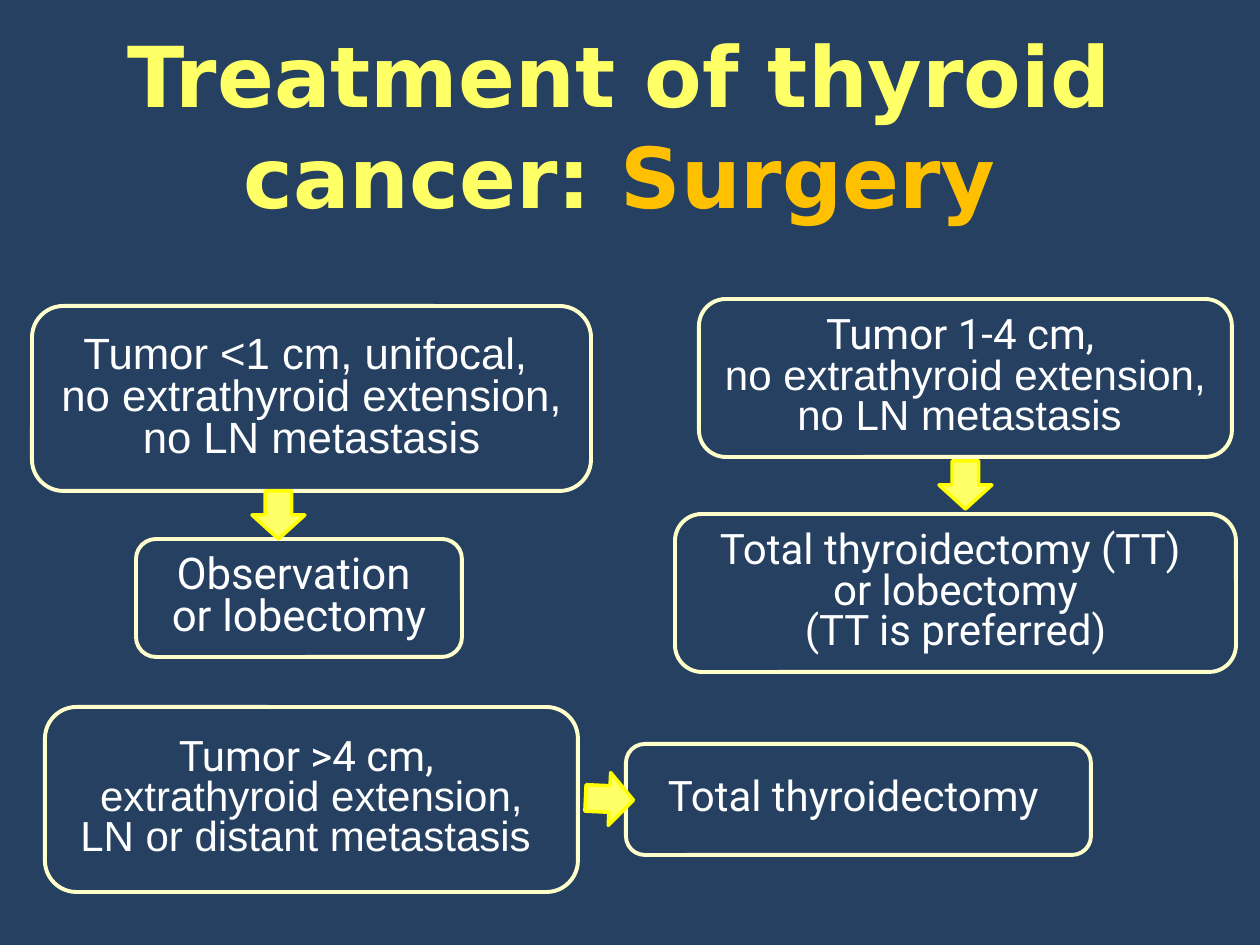
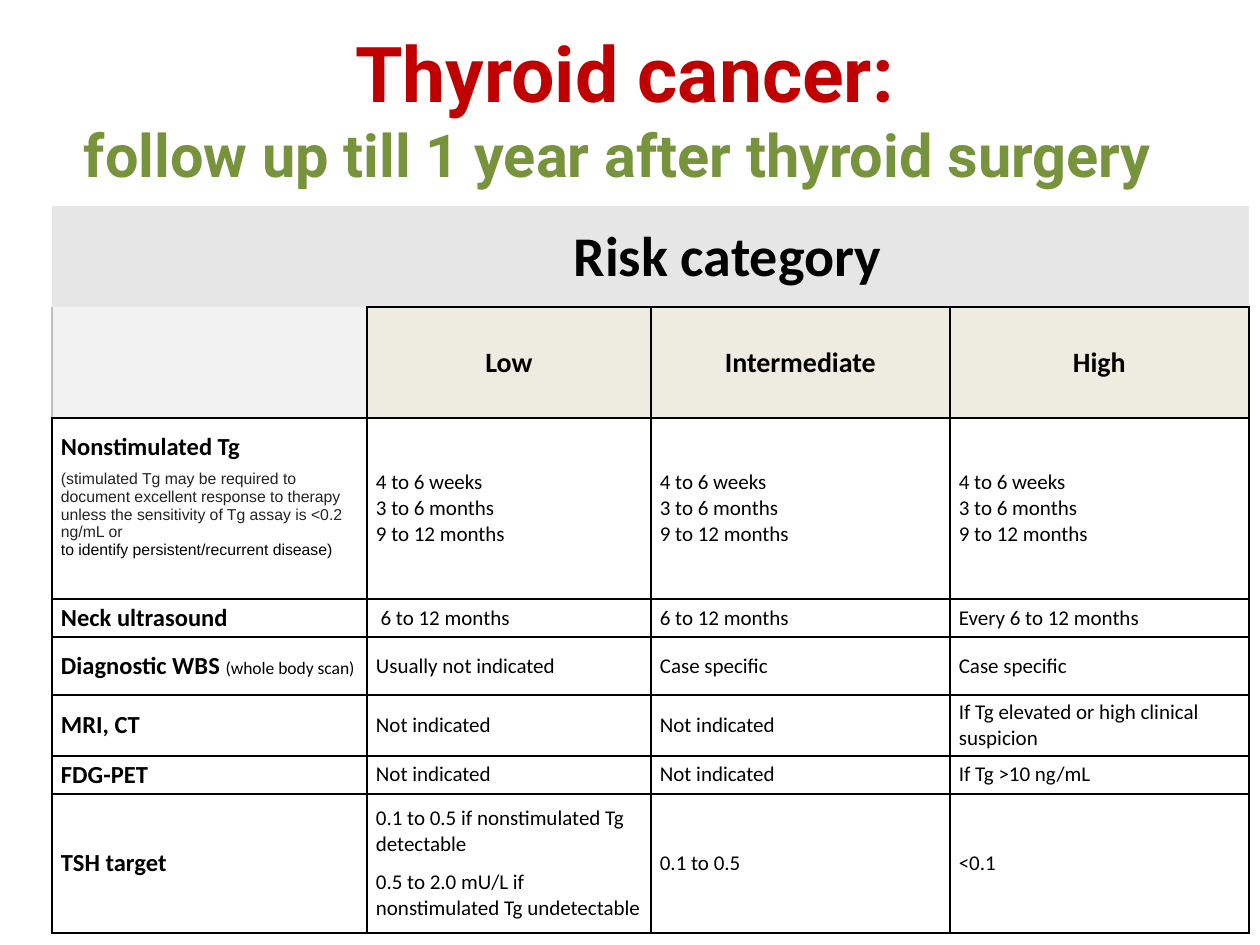
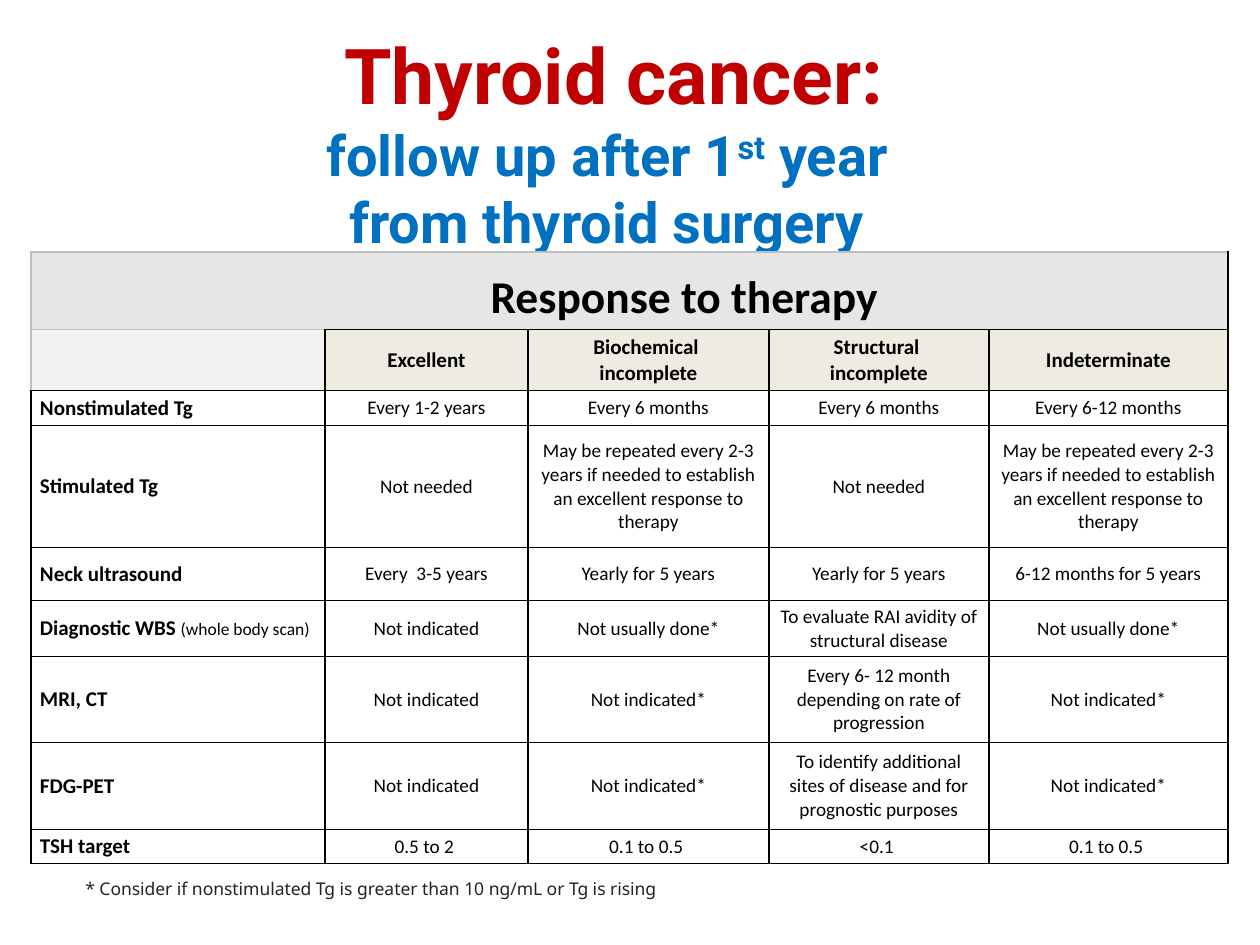
from lxml import etree
from pptx import Presentation
from pptx.dml.color import RGBColor
from pptx.enum.shapes import MSO_SHAPE
from pptx.enum.text import MSO_ANCHOR, MSO_AUTO_SIZE, PP_ALIGN
from pptx.oxml.ns import qn
from pptx.util import Pt

PX = 914400 // 126
TITLE_ONLY = 5
LEFT, CENTER = PP_ALIGN.LEFT, PP_ALIGN.CENTER
MIDDLE = MSO_ANCHOR.MIDDLE
NO_AUTOFIT = MSO_AUTO_SIZE.NONE
ROUND_BOX, DOWN_ARROW = MSO_SHAPE.ROUNDED_RECTANGLE, MSO_SHAPE.DOWN_ARROW
PLAIN_TABLE = "{2D5ABB26-0587-4C30-8999-92F81FD0307C}"

NAVY, WHITE, BLACK, INK = "254061", "FFFFFF", "000000", "232323"
LEMON, YELLOW, CREAM, AMBER = "FFFF66", "FFFF00", "FFFFCC", "FFC000"
RED, GREEN, BLUE = "C00000", "77933C", "0070C0"
BAND, CORNER, HEAD, GREY = "E6E6E6", "F2F2F2", "EEECE1", "BFBFBF"
BLACK_LINE, GREY_LINE = (BLACK, 1), (GREY, 0.75)


def paint(fill, color):
    fill.solid()
    fill.fore_color.rgb = RGBColor.from_string(color)


def add_run(paragraph, text, size, font, color, bold=False):
    run = paragraph.add_run()
    run.text = text
    run.font.size = Pt(size)
    run.font.name = font
    run.font.bold = bold
    paint(run.font.fill, color)
    return run


prs = Presentation()
prs.slide_width, prs.slide_height = 1260 * PX, 945 * PX

# Backgrounds and titles: background, title box, bottom inset, lines of runs
headline = [("Thyroid cancer:", 44, "Roboto", RED)]
title_specs = [
    (NAVY, (84, 45, 1071, 158), 6, [
        [("Treatment of thyroid cancer: ", 48, "DejaVu Sans", LEMON),
         ("Surgery", 48, "DejaVu Sans", AMBER)]]),
    (WHITE, (-10, 63, 1270, 158), 76, [
        headline,
        [("follow up till 1 year after thyroid surgery ", 34, "Roboto", GREEN)]]),
    (WHITE, (-21, 95, 1270, 158), 72, [
        headline,
        [("follow up after 1", 32, "Roboto", BLUE), ("st", 32, "Roboto", BLUE),
         (" year ", 32, "Roboto", BLUE)],
        [("from thyroid surgery ", 32, "Roboto", BLUE)]]),
]
slides = []
for background, box, bottom_inset, lines in title_specs:
    slide = prs.slides.add_slide(prs.slide_layouts[TITLE_ONLY])
    slides.append(slide)
    paint(slide.background.fill, background)
    title = slide.shapes.title
    title.left, title.top, title.width, title.height = [n * PX for n in box]
    frame = title.text_frame
    frame.auto_size = NO_AUTOFIT
    frame.vertical_anchor = MIDDLE
    frame.margin_bottom = bottom_inset * PX
    paragraph = frame.paragraphs[0]
    paragraph.alignment = CENTER
    for number, line in enumerate(lines):
        if number:
            paragraph.add_line_break()
        for text, size, font, color in line:
            run = add_run(paragraph, text, size, font, color, True)
            if text == "st":
                run.font._element.set("baseline", "30000")

surgery, first_year, later_years = slides

# Surgery flow: box, text size, lines with their fonts
decisions = [
    ((136, 539, 326, 118), 25, [("Observation ", "Roboto"), ("or lobectomy", "Roboto")]),
    ((699, 299, 533, 158), 24, [("Tumor 1-4 cm, ", "Roboto"),
                                ("no extrathyroid extension,", "Arial"),
                                ("no LN metastasis ", "Arial")]),
    ((32, 306, 559, 185), 25, [("Tumor <1 cm, unifocal, ", "Arial"),
                               ("no extrathyroid extension,", "Arial"),
                               ("no LN metastasis", "Arial")]),
    ((675, 514, 561, 158), 24, [("Total thyroidectomy (TT) ", "Roboto"),
                                ("or lobectomy", "Roboto"),
                                ("(TT is preferred)", "Roboto")]),
    ((45, 707, 533, 185), 24, [("Tumor >4 cm, ", "Roboto"),
                               ("extrathyroid extension,", "Arial"),
                               ("LN or distant metastasis ", "Arial")]),
    ((626, 744, 465, 111), 24, [("Total thyroidectomy ", "Roboto")]),
]
for box, size, lines in decisions:
    decision = surgery.shapes.add_shape(ROUND_BOX, *[n * PX for n in box])
    decision.shadow.inherit = False
    decision.adjustments[0] = 0.17
    decision.fill.background()
    paint(decision.line.fill, CREAM)
    decision.line.width = Pt(2.25)
    frame = decision.text_frame
    frame.word_wrap = False
    frame.vertical_anchor = MIDDLE
    for number, (text, font) in enumerate(lines):
        paragraph = frame.add_paragraph() if number else frame.paragraphs[0]
        paragraph.alignment = CENTER
        paragraph.line_spacing = 0.8
        add_run(paragraph, text, size, font, WHITE)

for left, top, rotation in [(252, 491, 0), (939, 461, 0), (583, 775, 272.6)]:
    arrow = surgery.shapes.add_shape(DOWN_ARROW, left * PX, top * PX, 53 * PX, 48 * PX)
    arrow.shadow.inherit = False
    arrow.rotation = rotation
    paint(arrow.fill, LEMON)
    paint(arrow.line.fill, YELLOW)
    arrow.line.width = Pt(2)

# Follow-up tables: the first row is a merged band, the second holds column heads
intervals = "4 to 6 weeks\n3 to 6 months\n9 to 12 months"
repeat_test = ("May be repeated every 2-3 years if needed to establish "
               "an excellent response to therapy")
schedules = [
    dict(slide=first_year, corner=(52, 206), align=LEFT,
         columns=[315, 284, 299, 299],
         heights=[101, 111, 181, 38, 58, 61, 38, 139],
         band="Risk category", band_size=32, band_inset=(163, 5),
         head_size=16, label_size=14, body_size=12,
         band_borders={},
         corner_borders={"L": GREY_LINE, "R": BLACK_LINE, "B": BLACK_LINE},
         rows=[
             ["", "Low", "Intermediate", "High"],
             ["Nonstimulated Tg", intervals, intervals, intervals],
             ["Neck ultrasound", " 6 to 12 months", "6 to 12 months",
              "Every 6 to 12 months"],
             ["Diagnostic WBS (whole body scan)", "Usually not indicated",
              "Case specific", "Case specific"],
             ["MRI, CT", "Not indicated", "Not indicated",
              "If Tg elevated or high clinical suspicion"],
             ["FDG-PET", "Not indicated", "Not indicated", "If Tg >10 ng/mL"],
             ["TSH target",
              "0.1 to 0.5 if nonstimulated Tg detectable\n"
              "0.5 to 2.0 mU/L if nonstimulated Tg undetectable",
              "0.1 to 0.5", "<0.1"],
         ]),
    dict(slide=later_years, corner=(31, 252), align=CENTER,
         columns=[294, 203, 241, 220, 239],
         heights=[77, 61, 35, 122, 53, 56, 86, 87, 34],
         band="Response to therapy", band_size=26, band_inset=(119, 18),
         head_size=12, label_size=12, body_size=11,
         band_borders={"L": GREY_LINE, "R": BLACK_LINE, "T": GREY_LINE, "B": GREY_LINE},
         corner_borders={"L": GREY_LINE, "R": BLACK_LINE, "T": GREY_LINE,
                         "B": BLACK_LINE},
         rows=[
             ["", "Excellent", "Biochemical \nincomplete", "Structural \nincomplete",
              "Indeterminate"],
             ["Nonstimulated Tg", "Every 1-2 years", "Every 6 months",
              "Every 6 months", "Every 6-12 months"],
             ["Stimulated Tg", "Not needed", repeat_test, "Not needed", repeat_test],
             ["Neck ultrasound", "Every  3-5 years", "Yearly for 5 years",
              "Yearly for 5 years", "6-12 months for 5 years"],
             ["Diagnostic WBS (whole body scan)", "Not indicated", "Not usually done*",
              "To evaluate RAI avidity of structural disease", "Not usually done*"],
             ["MRI, CT", "Not indicated", "Not indicated*",
              "Every 6- 12 month depending on rate of progression", "Not indicated*"],
             ["FDG-PET", "Not indicated", "Not indicated*",
              "To identify additional sites of disease and for prognostic purposes",
              "Not indicated*"],
             ["TSH target", "0.5 to 2 ", "0.1 to 0.5 ", "<0.1 ", "0.1 to 0.5 "],
         ]),
]
tables = []
for plan in schedules:
    columns, heights = plan["columns"], plan["heights"]
    left, top = plan["corner"]
    table = plan["slide"].shapes.add_table(
        len(heights), len(columns), left * PX, top * PX,
        sum(columns) * PX, sum(heights) * PX).table
    tables.append(table)
    table.first_row = table.horz_banding = False
    table._tbl.tblPr.find(qn("a:tableStyleId")).text = PLAIN_TABLE
    for column, width in zip(table.columns, columns):
        column.width = width * PX
    for row, height in zip(table.rows, heights):
        row.height = height * PX
    table.cell(0, 0).merge(table.cell(0, len(columns) - 1))

    band_row = [plan["band"]] + [""] * (len(columns) - 1)
    for r, texts in enumerate([band_row] + plan["rows"]):
        for c, text in enumerate(texts):
            cell = table.cell(r, c)
            if cell.is_spanned:
                continue
            borders = dict.fromkeys("LRTB", BLACK_LINE)
            fill, size, bold, align = WHITE, plan["body_size"], False, plan["align"]
            inset_left, inset_top = 9, 4
            if r == 0:
                fill, size, bold, align = BAND, plan["band_size"], True, CENTER
                borders = plan["band_borders"]
                inset_left, inset_top = plan["band_inset"]
            elif r == 1 and c == 0:
                fill, borders = CORNER, plan["corner_borders"]
            elif r == 1:
                fill, size, bold, align = HEAD, plan["head_size"], True, CENTER
            elif c == 0:
                size, bold, align = plan["label_size"], True, LEFT

            cell.vertical_anchor = MIDDLE
            cell.margin_left, cell.margin_right = inset_left * PX, 9 * PX
            cell.margin_top, cell.margin_bottom = inset_top * PX, 4 * PX
            for side in "LRTB":
                if side in borders:
                    color, width = borders[side]
                    edge = etree.SubElement(cell._tc.get_or_add_tcPr(),
                                            qn("a:ln" + side), w=str(Pt(width)))
                    solid = etree.SubElement(edge, qn("a:solidFill"))
                    etree.SubElement(solid, qn("a:srgbClr"), val=color)
            paint(cell.fill, fill)

            if not text:
                continue
            for number, line in enumerate(text.split("\n")):
                frame = cell.text_frame
                paragraph = frame.add_paragraph() if number else frame.paragraphs[0]
                paragraph.alignment = align
                label, bracket, note = line.partition("(")
                add_run(paragraph, label, size, "Calibri", BLACK, bold)
                if note:
                    add_run(paragraph, bracket + note, 10, "Calibri", BLACK)

# Details of the first-year table
tg_cell = tables[0].cell(2, 0)
tg_cell.margin_bottom = 30 * PX
tg_note = [
    ("(stimulated Tg may be required to document excellent response to therapy "
     "unless the sensitivity of Tg assay is <0.2 ng/mL or", INK, 5),
    ("to identify persistent/recurrent disease)", BLACK, 0),
]
for text, color, gap in tg_note:
    paragraph = tg_cell.text_frame.add_paragraph()
    paragraph.space_before = Pt(gap)
    add_run(paragraph, text, 9, "Arial", color)
tables[0].cell(7, 1).text_frame.paragraphs[1].space_before = Pt(7)

# Footnote to the later-years table
footnote = later_years.shapes.add_textbox(73 * PX, 872 * PX, 735 * PX, 34 * PX)
footnote.text_frame.word_wrap = True
add_run(footnote.text_frame.paragraphs[0],
        "* Consider if nonstimulated Tg is greater than 10 ng/mL or Tg is rising",
        10, "Noto Sans", INK)

prs.save("out.pptx")
